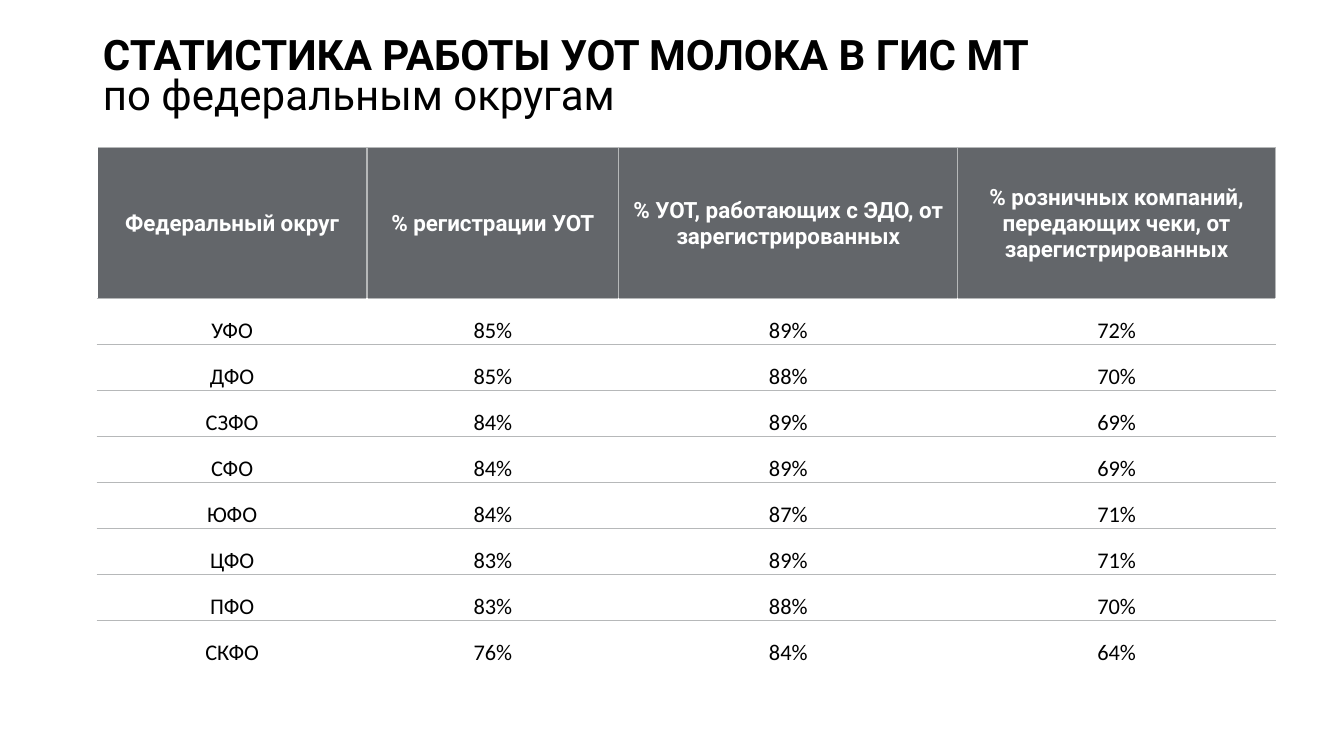
from dataclasses import dataclass

from lxml.etree import SubElement
from pptx import Presentation
from pptx.dml.color import RGBColor
from pptx.enum.text import MSO_ANCHOR as Anchor, MSO_AUTO_SIZE as AutoSize, PP_ALIGN as Align
from pptx.oxml import parse_xml
from pptx.oxml.ns import nsdecls, qn
from pptx.util import Cm, Pt


@dataclass(frozen=True)
class Theme:
    ink: str = "000000"
    paper: str = "FFFFFF"
    header: str = "63666A"
    rule: str = "B6B8B9"
    heading_font: str = "Roboto"
    body_font: str = "Calibri"
    title_size: int = 30
    table_size: int = 16
    rule_width: int = 1
    row_opacity: int = 80


@dataclass(frozen=True)
class Box:
    left: float
    top: float
    width: float
    height: float


THEME = Theme()
TITLE_ONLY = 5
HEADING = [("СТАТИСТИКА РАБОТЫ УОТ МОЛОКА В ГИС МТ", True),
           ("по федеральным округам", False)]
COLUMNS = [("Федеральный округ", 6.8),
           ("% регистрации УОТ", 6.34),
           ("% УОТ, работающих с ЭДО, от зарегистрированных", 8.55),
           ("% розничных компаний, передающих чеки, от зарегистрированных", 8.0)]
DISTRICTS = [("УФО", 85, 89, 72),
             ("ДФО", 85, 88, 70),
             ("СЗФО", 84, 89, 69),
             ("СФО", 84, 89, 69),
             ("ЮФО", 84, 87, 71),
             ("ЦФО", 83, 89, 71),
             ("ПФО", 83, 88, 70),
             ("СКФО", 76, 84, 64)]
HEADER_HEIGHT = 3.81


def style_text(paragraph, font_name, size, color, bold):
    font = paragraph.font
    font.name, font.size, font.bold = font_name, Pt(size), bold
    font.color.rgb = RGBColor.from_string(color)


def set_borders(cell, borders):
    """Draw the given sides, keyed in schema order: L, R, T, B."""
    properties = cell._tc.get_or_add_tcPr()
    for position, (side, color) in enumerate(borders.items()):
        properties.insert(position, parse_xml(
            f'<a:ln{side} {nsdecls("a")} w="{Pt(THEME.rule_width)}"><a:solidFill>'
            f'<a:srgbClr val="{color}"/></a:solidFill></a:ln{side}>'))


def fill_cell(cell, text, fill, anchor):
    cell.text = text
    cell.vertical_anchor = anchor
    cell.margin_left = cell.margin_right = cell.margin_top = Cm(0.03)
    cell.margin_bottom = 0
    cell.fill.solid()
    cell.fill.fore_color.rgb = RGBColor.from_string(fill)
    paragraph = cell.text_frame.paragraphs[0]
    paragraph.alignment = Align.CENTER
    return paragraph


def add_heading(slide, box):
    title = slide.shapes.title
    title.left, title.top = Cm(box.left), Cm(box.top)
    title.width, title.height = Cm(box.width), Cm(box.height)
    frame = title.text_frame
    frame.word_wrap = True
    frame.auto_size = AutoSize.SHAPE_TO_FIT_TEXT
    frame.vertical_anchor = Anchor.MIDDLE
    frame.text = "\n".join(line for line, _ in HEADING)
    for paragraph, (_, bold) in zip(frame.paragraphs, HEADING):
        paragraph.alignment = Align.LEFT
        paragraph.line_spacing = 0.8
        style_text(paragraph, THEME.heading_font, THEME.title_size, THEME.ink, bold)


def add_district_table(slide, box):
    table = slide.shapes.add_table(
        len(DISTRICTS) + 1, len(COLUMNS),
        Cm(box.left), Cm(box.top), Cm(box.width), Cm(box.height)).table
    table.horz_banding = table.first_row = False

    # Column widths share the box; district rows share the height below the header
    total_width = sum(width for _, width in COLUMNS)
    for column, (_, width) in zip(table.columns, COLUMNS):
        column.width = Cm(box.width * width / total_width)
    for row in table.rows:
        row.height = Cm((box.height - HEADER_HEIGHT) / len(DISTRICTS))
    table.rows[0].height = Cm(HEADER_HEIGHT)

    # Header
    for index, (label, _) in enumerate(COLUMNS):
        cell = table.cell(0, index)
        paragraph = fill_cell(cell, label, THEME.header, Anchor.MIDDLE)
        style_text(paragraph, THEME.heading_font, THEME.table_size, THEME.paper, True)
        set_borders(cell, {"L": THEME.rule if index else THEME.paper,
                           "R": THEME.rule, "T": THEME.rule})

    # Districts, ruled between rows
    for row_number, (district, *shares) in enumerate(DISTRICTS, start=1):
        sides = {"T": THEME.rule, "B": THEME.rule}
        if row_number == len(DISTRICTS):
            del sides["B"]
        for index, text in enumerate([district, *(f"{share}%" for share in shares)]):
            cell = table.cell(row_number, index)
            paragraph = fill_cell(cell, text, THEME.paper, Anchor.BOTTOM)
            style_text(paragraph, THEME.body_font, THEME.table_size, THEME.ink, False)
            fill_color = cell._tc.tcPr.find(f'{qn("a:solidFill")}/{qn("a:srgbClr")}')
            SubElement(fill_color, qn("a:alpha"), val=str(THEME.row_opacity * 1000))
            set_borders(cell, sides)


def main():
    deck = Presentation()
    deck.slide_width, deck.slide_height = Cm(33.87), Cm(19.05)
    slide = deck.slides.add_slide(deck.slide_layouts[TITLE_ONLY])
    add_heading(slide, Box(2.34, 0.81, 29.92, 2.34))
    add_district_table(slide, Box(2.45, 3.72, 29.69, 13.08))
    deck.save("out.pptx")


if __name__ == "__main__":
    main()
